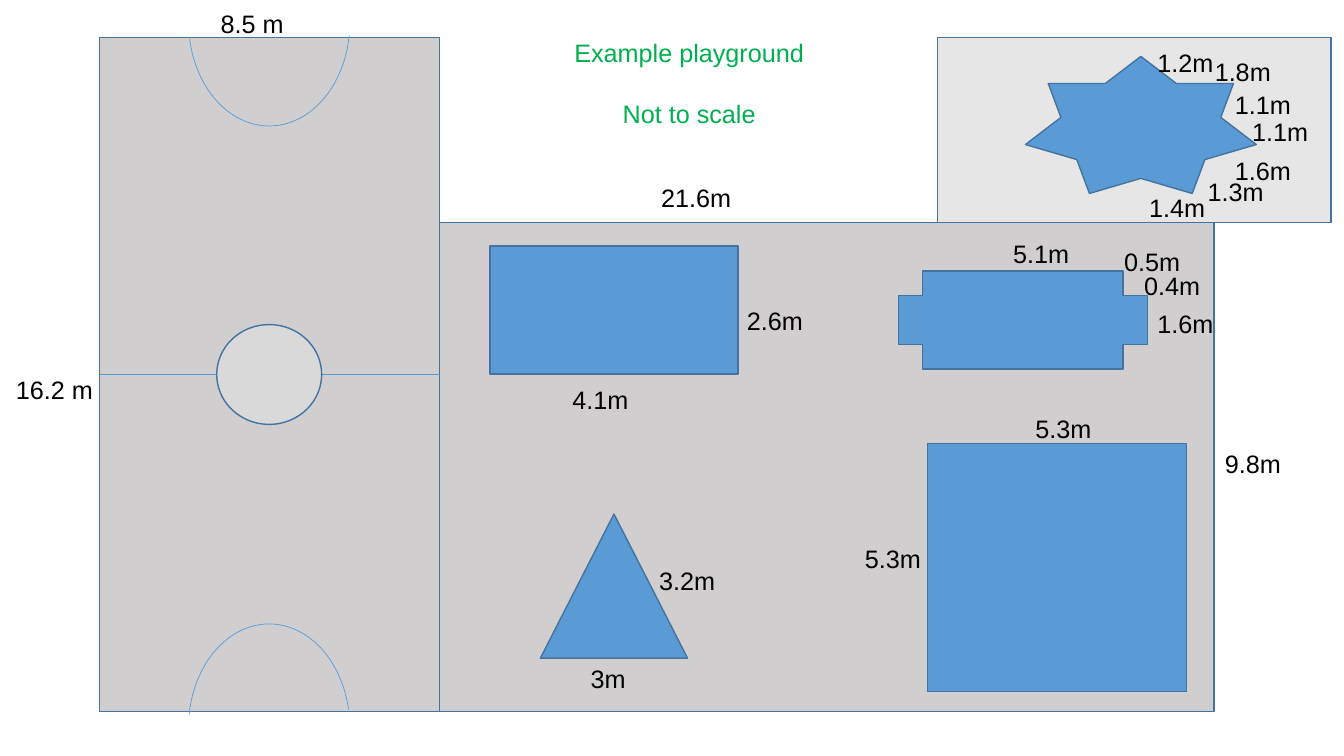
from pptx import Presentation
from pptx import util as u
from pptx.dml.color import RGBColor
from pptx.enum import shapes, text
from pptx.oxml.ns import qn
from lxml import etree

KIND = shapes.MSO_SHAPE
COLORS = {
    "ground": "D0CECE",
    "annex": "E7E6E6",
    "circle": "D9D9D9",
    "blue": "5B9BD5",
    "outline": "43739E",
    "title": "00B050",
    "label": "000000",
}


class PlaygroundPlan:
    font = "Arial"
    size = u.Pt(18)

    def __init__(self, slide):
        self.slide = slide

    def color(self, name):
        return RGBColor.from_string(COLORS[name])

    def area(self, kind, left, top, width, height, fill="blue"):
        shape = self.slide.shapes.add_shape(
            kind, *map(u.Inches, (left, top, width, height)))
        shape.shadow.inherit = False
        shape.fill.solid()
        shape.fill.fore_color.rgb = self.color(fill)
        shape.line.color.rgb = self.color("outline")
        shape.line.width = u.Pt(1)
        return shape

    def goal_arc(self, top, end, rotation=0):
        arc = self.area(KIND.ARC, 1.87, top, 1.6, 2.06)
        arc.fill.background()
        arc.line.color.rgb = self.color("blue")
        arc.line.width = u.Pt(0.5)
        arc.adjustments[0] = 113.64
        arc.adjustments[1] = end
        arc.rotation = rotation

    def halfway_line(self, court):
        """Join the middles of the court's left and right sides."""
        line = self.slide.shapes.add_connector(
            shapes.MSO_CONNECTOR.STRAIGHT, 0, 0, 0, 0)
        line.begin_connect(court, 1)
        line.end_connect(court, 3)
        line.line.color.rgb = self.color("blue")
        line.line.width = u.Pt(0.5)
        etree.SubElement(line._element.spPr, qn("a:effectLst"))

    def words(self, content, left, top, width=1.76, height=0.4,
              color="label", align=text.PP_ALIGN.LEFT, gap=0):
        box = self.slide.shapes.add_textbox(
            *map(u.Inches, (left, top, width, height)))
        frame = box.text_frame
        frame.word_wrap = True
        frame.auto_size = text.MSO_AUTO_SIZE.SHAPE_TO_FIT_TEXT
        frame.text = content
        for index, paragraph in enumerate(frame.paragraphs):
            paragraph.alignment = align
            paragraph.space_before = u.Pt(gap if index else 0)
            for run in paragraph.runs:
                run.font.name = self.font
                run.font.size = self.size
                run.font.color.rgb = self.color(color)


LABELS = [
    # court and main ground
    ("8.5 m", 2.09, 0.03), ("16.2 m", 0.06, 3.66),
    ("21.6m", 6.46, 1.76), ("9.8m", 12.05, 4.4),
    # rectangle, triangle and square
    ("4.1m", 5.58, 3.76), ("2.6m", 7.31, 2.98),
    ("3.2m", 6.44, 5.56), ("3m", 5.76, 6.53),
    ("5.3m", 10.17, 4.05), ("5.3m", 8.48, 5.34),
    # cross
    ("5.1m", 9.95, 2.32), ("0.5m", 11.05, 2.39),
    ("0.4m", 11.25, 2.63), ("1.6m", 11.38, 3.01),
    # star
    ("1.2m", 11.38, 0.42), ("1.8m", 11.95, 0.51),
    ("1.1m", 12.15, 0.84), ("1.1m", 12.32, 1.1),
    ("1.6m", 12.15, 1.49), ("1.3m", 11.88, 1.7),
    ("1.4m", 11.3, 1.86),
]


def main():
    presentation = Presentation()
    presentation.slide_width = u.Inches(13.33)
    presentation.slide_height = u.Inches(7.5)
    slide = presentation.slides.add_slide(presentation.slide_layouts[6])
    plan = PlaygroundPlan(slide)

    court = plan.area(KIND.RECTANGLE, 0.99, 0.37, 3.37, 6.69, "ground")
    plan.area(KIND.RECTANGLE, 4.36, 2.21, 7.68, 4.85, "ground")
    plan.goal_arc(6.19, 208.29)
    plan.goal_arc(-0.81, 208.87, rotation=180)
    plan.halfway_line(court)
    plan.area(KIND.OVAL, 2.15, 3.22, 1.04, 0.99, "circle")

    plan.area(KIND.RECTANGLE, 4.86, 2.44, 2.46, 1.27)
    plan.area(KIND.RECTANGLE, 9.2, 4.4, 2.57, 2.46)
    plan.area(KIND.ISOSCELES_TRIANGLE, 5.36, 5.1, 1.46, 1.43)
    plan.area(KIND.RECTANGLE, 9.3, 0.37, 3.9, 1.84, "annex")
    plan.area(KIND.STAR_7_POINT, 10.17, 0.56, 2.29, 1.36)
    plan.area(KIND.CROSS, 8.91, 2.69, 2.47, 0.97)

    plan.words("Example playground\nNot to scale", 5.49, 0.32, 2.69, 1.01,
               "title", text.PP_ALIGN.CENTER, gap=22)
    for content, left, top in LABELS:
        plan.words(content, left, top)

    presentation.save("out.pptx")


if __name__ == "__main__":
    main()
